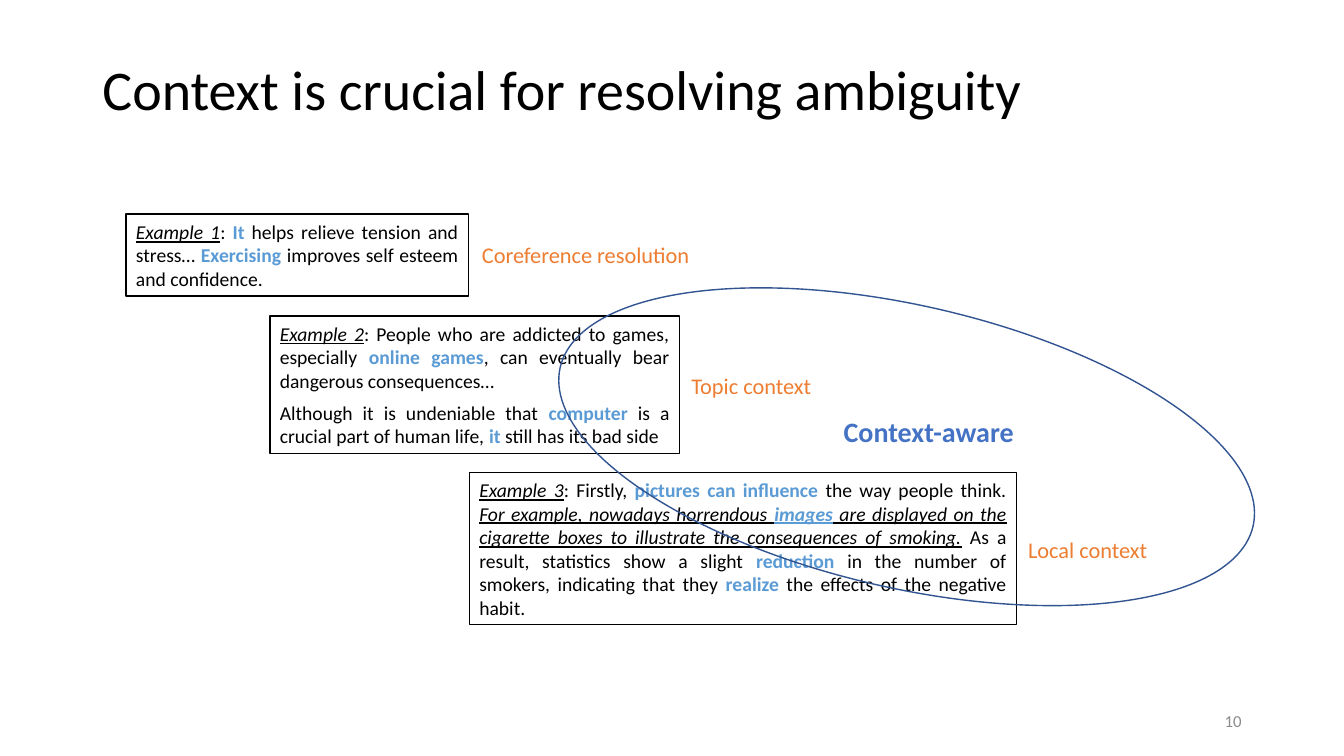
from pptx import Presentation
from pptx.dml.color import RGBColor
from pptx.enum.shapes import MSO_SHAPE as Shape
from pptx.enum.text import MSO_ANCHOR as Anchor, MSO_AUTO_SIZE as AutoSize, PP_ALIGN as Align
from pptx.util import Emu, Pt

EMU_PER_PX = 9525  # 96 px to the inch
BLACK, WHITE, GREY = "000000", "FFFFFF", "8C8C8C"
SKY, ORANGE, BLUE, NAVY = "5B9BD5", "ED7D31", "4472C4", "325491"

PLAIN = {}
KEY = {"color": SKY, "bold": True}
STRESSED = {"italic": True, "underline": True}
STRESSED_KEY = {**STRESSED, **KEY}


def px(*lengths):
    return [Emu(length * EMU_PER_PX) for length in lengths]


def rgb(hex_color):
    return RGBColor.from_string(hex_color)


def add_run(paragraph, text, size, color=BLACK, bold=False, italic=False, underline=False):
    run = paragraph.add_run()
    run.text = text
    font = run.font
    font.name, font.size, font.color.rgb = "Calibri", Pt(size), rgb(color)
    font.bold, font.italic, font.underline = bold, italic, underline


def write(frame, *paragraphs, align=Align.LEFT, after=0, spacing=1.0, wrap=True,
          fit=AutoSize.NONE, **run_format):
    """Fill a text frame; each paragraph is a list of (text, run format) pairs."""
    frame.word_wrap, frame.auto_size = wrap, fit
    frame.vertical_anchor = Anchor.MIDDLE
    for index, runs in enumerate(paragraphs):
        paragraph = frame.add_paragraph() if index else frame.paragraphs[0]
        paragraph.alignment, paragraph.line_spacing = align, spacing
        paragraph.space_before, paragraph.space_after = Pt(0), Pt(after)
        for text, changes in runs:
            add_run(paragraph, text, **{**run_format, **changes})


class ContextSlide:
    def __init__(self, deck):
        self.slide = deck.slides.add_slide(deck.slide_layouts[5])
        self.shapes = self.slide.shapes

    def title(self, text, left, top, width, height):
        heading = self.shapes.title
        heading.left, heading.top, heading.width, heading.height = px(left, top, width, height)
        write(heading.text_frame, [(text, PLAIN)], size=40, spacing=0.9)

    def outline(self, kind, box, color):
        shape = self.shapes.add_shape(kind, *px(*box))
        shape.shadow.inherit = False
        shape.fill.background()
        shape.line.color.rgb, shape.line.width = rgb(color), Pt(1)
        return shape

    def example(self, box, *paragraphs):
        card = self.outline(Shape.RECTANGLE, box, BLACK)
        card.fill.solid()
        card.fill.fore_color.rgb = rgb(WHITE)
        write(card.text_frame, *paragraphs, size=14, align=Align.JUSTIFY, after=6,
              fit=AutoSize.SHAPE_TO_FIT_TEXT)

    def label(self, text, box, **text_format):
        caption = self.shapes.add_textbox(*px(*box))
        write(caption.text_frame, [(text, PLAIN)], align=Align.RIGHT, **text_format)

    def ellipse(self, box, rotation, color):
        self.outline(Shape.OVAL, box, color).rotation = rotation


def main():
    deck = Presentation()
    deck.slide_width, deck.slide_height = px(1280, 720)
    page = ContextSlide(deck)
    page.title("Context is crucial for resolving ambiguity", 88, 38, 1104, 100)
    page.label("10", (904, 667, 288, 38), size=12, color=GREY)

    page.example(
        (120, 204, 326, 78),
        [("Example 1", STRESSED), (": ", PLAIN), ("It", KEY),
         (" helps relieve tension and stress… ", PLAIN), ("Exercising", KEY),
         (" improves self esteem and confidence.", PLAIN)])
    page.example(
        (257, 301, 390, 131),
        [("Example 2", STRESSED),
         (": People who are addicted to games, especially ", PLAIN), ("online games", KEY),
         (", can eventually bear dangerous consequences…", PLAIN)],
        [("Although it is undeniable that ", PLAIN), ("computer", KEY),
         (" is a crucial part of human life, ", PLAIN), ("it", KEY),
         (" still has its bad side", PLAIN)])
    page.example(
        (447, 450, 521, 145),
        [("Example 3", STRESSED), (": Firstly, ", PLAIN), ("pictures can influence", KEY),
         (" the way people think. ", PLAIN),
         ("For example, nowadays horrendous ", STRESSED), ("images", STRESSED_KEY),
         (" are displayed on the cigarette boxes to illustrate the consequences of smoking.",
          STRESSED),
         (" As a result, statistics show a slight ", PLAIN), ("reduction", KEY),
         (" in the number of smokers, indicating that they ", PLAIN), ("realize", KEY),
         (" the effects of the negative habit.", PLAIN)])

    hugging = {"wrap": False, "fit": AutoSize.SHAPE_TO_FIT_TEXT}
    for problem, box in (("Coreference resolution", (446, 224, 220, 36)),
                         ("Topic context", (647, 349, 135, 36)),
                         ("Local context", (968, 505, 134, 36))):
        page.label(problem, box, size=16, color=ORANGE, **hugging)

    page.ellipse((525, 291, 677, 269), 12.9, NAVY)
    page.label("Context-aware", (792, 390, 183, 42), size=20, color=BLUE, bold=True, **hugging)
    deck.save("out.pptx")


if __name__ == "__main__":
    main()
